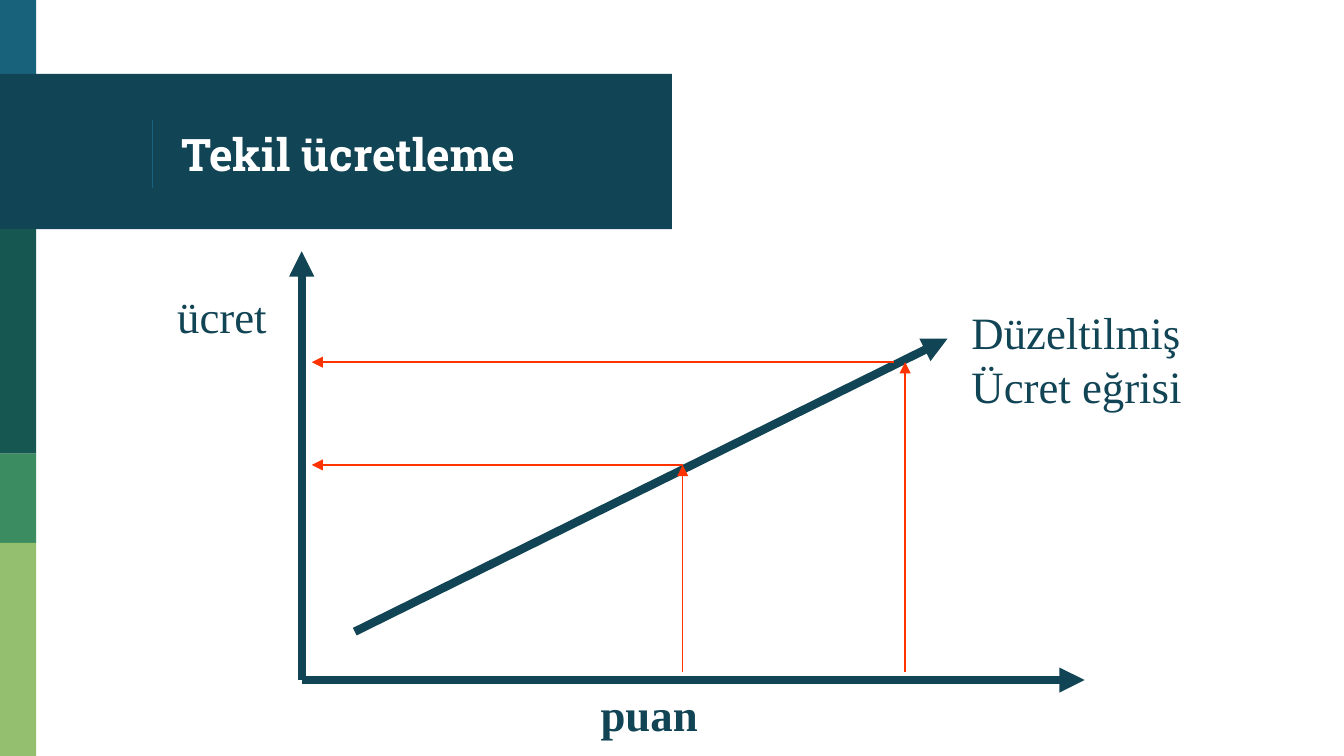
from pptx import Presentation
from pptx.dml.color import RGBColor
from pptx.enum.shapes import MSO_CONNECTOR as Link, MSO_SHAPE as Kind
from pptx.enum.text import MSO_ANCHOR as Anchor, MSO_AUTO_SIZE as Fit
from pptx.oxml.ns import qn
from pptx.util import Emu, Pt
from lxml.etree import SubElement as Sub

SCALE = 4572  # 200 px to the inch
NAVY, BLUE, RED, WHITE = "114454", "18637B", "FF3300", "FFFFFF"


def px(n):
    return Emu(n * SCALE)


def tint(code):
    return RGBColor.from_string(code)


def write(frame, text, font="Times New Roman", size=24, color=NAVY,
          bold=False, before=0):
    para = frame.paragraphs[0]
    para.space_before = Pt(before)
    run = para.add_run()
    run.text = text
    run.font.name = font
    run.font.size = Pt(size)
    run.font.bold = bold
    run.font.color.rgb = tint(color)


class Page:
    def __init__(self, deck):
        self.shapes = deck.slides.add_slide(deck.slide_layouts[6]).shapes

    def block(self, left, top, width, height, color):
        box = self.shapes.add_shape(Kind.RECTANGLE, *map(px, (left, top, width, height)))
        box.shadow.inherit = False
        box.fill.solid()
        box.fill.fore_color.rgb = tint(color)
        box.line.fill.background()

    def line(self, start, end, color, width=0.75, arrow=True):
        link = self.shapes.add_connector(Link.STRAIGHT, *map(px, start + end))
        link.line.color.rgb = tint(color)
        link.line.width = Pt(width)
        if arrow:
            Sub(link.line._get_or_add_ln(), qn("a:tailEnd"), type="triangle")
        Sub(link._element.spPr, qn("a:effectLst"))

    def frame(self, left, top, width, height):
        box = self.shapes.add_textbox(*map(px, (left, top, width, height)))
        box.text_frame.word_wrap = True
        return box.text_frame

    def title(self, left, top, width, height, text):
        frame = self.frame(left, top, width, height)
        frame.vertical_anchor = Anchor.MIDDLE
        frame.margin_top = frame.margin_bottom = px(20)
        write(frame, text, font="Roboto Slab", color=WHITE, bold=True)

    def label(self, left, top, width, height, text, bold=False):
        frame = self.frame(left, top, width, height)
        frame.auto_size = Fit.SHAPE_TO_FIT_TEXT
        write(frame, text, bold=bold, before=3)


def main():
    deck = Presentation()
    deck.slide_width, deck.slide_height = px(2000), px(1125)
    page = Page(deck)

    # Side strip and title band
    page.block(0, 0, 54, 116, BLUE)
    page.block(0, 110, 1000, 231, NAVY)
    strip = [(341, 675, "165751"), (675, 808, "3B8D61"), (808, 1125, "94BF6E")]
    for top, end, color in strip:
        page.block(0, top, 54, end - top, color)
    page.line((227, 178), (227, 280), BLUE, arrow=False)
    page.title(250, 116, 702, 224, "Tekil ücretleme")

    # Axes and wage curve
    origin = (449, 1012)
    for start, end in [(origin, (449, 374)), (origin, (1614, 1012)),
                       ((528, 940), (1410, 504))]:
        page.line(start, end, NAVY, 4.5)

    # Readings from points up to the curve, then across to wage
    for x, y, turn in [(1016, 692, 1016), (1347, 539, 1330)]:
        page.line((x, 1000), (x, y), RED)
        page.line((turn, y), (464, y), RED)

    # Labels
    page.label(874, 1012, 582, 100, "puan", bold=True)
    page.label(244, 420, 204, 100, "ücret")
    page.label(1426, 444, 488, 182, "Düzeltilmiş Ücret eğrisi")

    deck.save("out.pptx")


if __name__ == "__main__":
    main()
